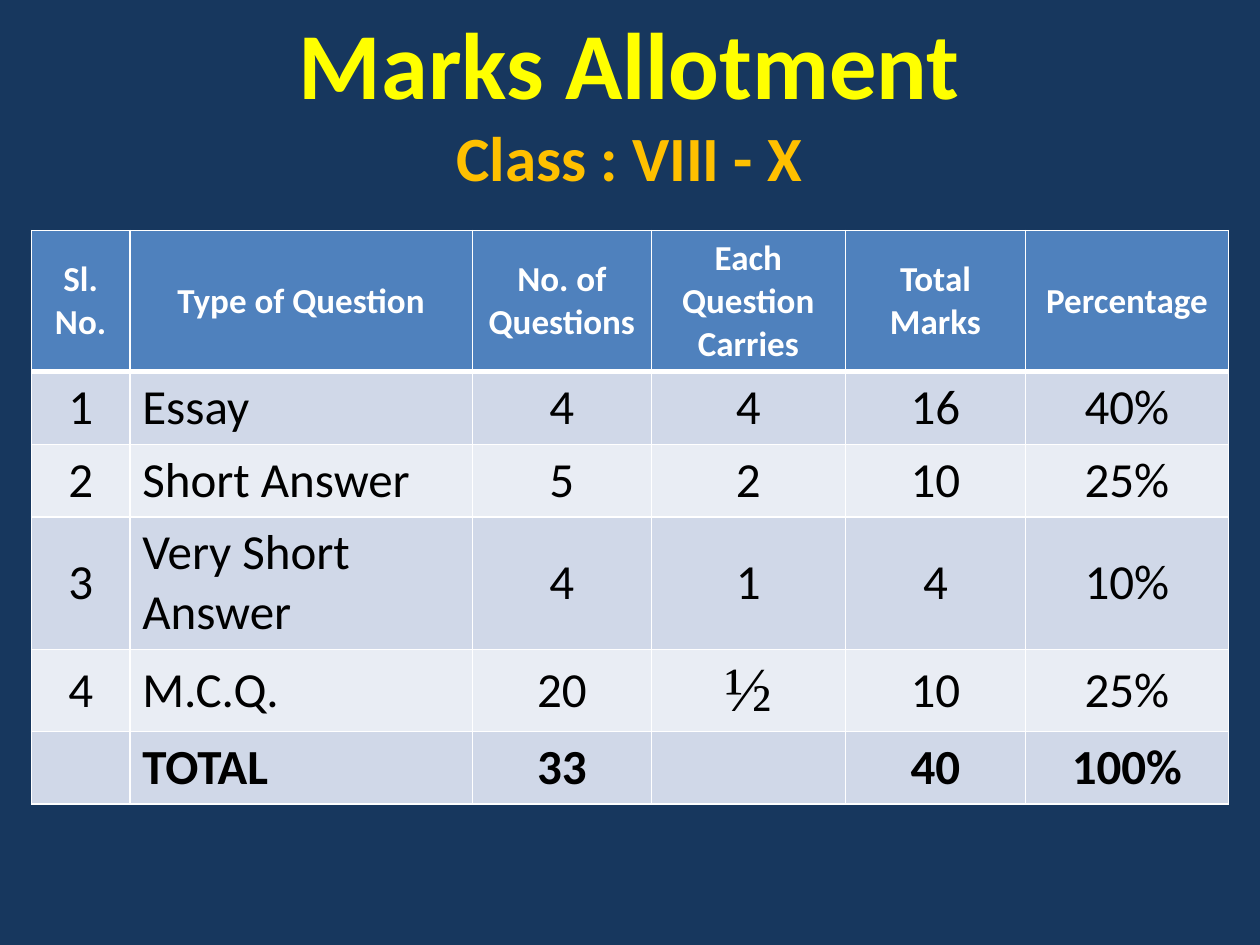
from dataclasses import dataclass
from lxml.etree import SubElement
from pptx import Presentation
from pptx.dml.color import RGBColor
from pptx.enum.text import MSO_ANCHOR, MSO_AUTO_SIZE, PP_ALIGN
from pptx.oxml.ns import qn
from pptx.util import Inches, Pt


@dataclass(frozen=True)
class Theme:
    back: str = "17375E"
    title: str = "FFFF00"
    sub: str = "FFC000"
    head: str = "4F81BD"
    odd: str = "D0D8E8"
    even: str = "E9EDF4"
    white: str = "FFFFFF"
    black: str = "000000"
    font: str = "Calibri"
    serif: str = "Times New Roman"
    big: int = 54
    mid: int = 36
    body: int = 28
    small: int = 20
    thin: int = 1
    thick: int = 3


THEME = Theme()
HALF = "½"
WIDTHS = (0.78, 2.72, 1.42, 1.54, 1.43, 1.61)
HEIGHTS = (1.12, 0.57, 0.57, 1.05, 0.65, 0.57)
MARKS = (
    ("Sl. No.", "Type of Question", "No. of Questions",
     "Each Question Carries", "Total Marks", "Percentage"),
    ("1", "Essay", "4", "4", "16", "40%"),
    ("2", "Short Answer", "5", "2", "10", "25%"),
    ("3", "Very Short Answer", "4", "1", "4", "10%"),
    ("4", "M.C.Q.", "20", HALF, "10", "25%"),
    ("", "TOTAL", "33", "", "40", "100%"),
)


def style(run, size, color, bold, face=THEME.font):
    font = run.font
    font.name = face
    font.size = Pt(size)
    font.bold = bold
    font.color.rgb = RGBColor.from_string(color)


def add_title(slide):
    title = slide.shapes.title
    title.left, title.top = Inches(0.12), Inches(0.08)
    title.width, title.height = Inches(9.75), Inches(1.42)
    frame = title.text_frame
    frame.text = "Marks Allotment\vClass : VIII - X"
    frame.word_wrap = True
    frame.auto_size = MSO_AUTO_SIZE.NONE
    frame.vertical_anchor = MSO_ANCHOR.MIDDLE
    line = frame.paragraphs[0]
    line.alignment = PP_ALIGN.CENTER
    main_run, sub_run = line.runs
    style(main_run, THEME.big, THEME.title, True)
    style(sub_run, THEME.mid, THEME.sub, True)


def add_edges(cell, row):
    props = cell._tc.get_or_add_tcPr()
    tops = {0: THEME.thin, 1: THEME.thick}
    top = tops.get(row, THEME.thin)
    base = tops.get(row + 1, THEME.thin)
    edges = {"lnL": THEME.thin, "lnR": THEME.thin, "lnT": top, "lnB": base}
    for tag, width in edges.items():
        edge = SubElement(props, qn(f"a:{tag}"), w=str(Pt(width)))
        fill = SubElement(edge, qn("a:solidFill"))
        SubElement(fill, qn("a:srgbClr"), val=THEME.white)


def fill_cell(cell, text, row, col):
    head = row == 0
    add_edges(cell, row)
    cell.fill.solid()
    shade = THEME.head if head else THEME.odd if row % 2 else THEME.even
    cell.fill.fore_color.rgb = RGBColor.from_string(shade)
    cell.vertical_anchor = MSO_ANCHOR.MIDDLE
    cell.text_frame.text = text
    line = cell.text_frame.paragraphs[0]
    left = col == 1 and not head
    line.alignment = PP_ALIGN.LEFT if left else PP_ALIGN.CENTER
    for run in line.runs:
        if head:
            style(run, THEME.small, THEME.white, True)
        elif text == HALF:
            style(run, THEME.mid, THEME.black, False, THEME.serif)
        else:
            style(run, THEME.body, THEME.black, row == len(MARKS) - 1)


def add_marks(slide):
    table = slide.shapes.add_table(
        len(MARKS), len(WIDTHS), Inches(0.25), Inches(1.83),
        Inches(sum(WIDTHS)), Inches(sum(HEIGHTS))).table
    for column, width in zip(table.columns, WIDTHS):
        column.width = Inches(width)
    for line, height in zip(table.rows, HEIGHTS):
        line.height = Inches(height)
    for row, texts in enumerate(MARKS):
        for col, text in enumerate(texts):
            fill_cell(table.cell(row, col), text, row, col)


def main():
    deck = Presentation()
    deck.slide_width, deck.slide_height = Inches(10), Inches(7.5)
    slide = deck.slides.add_slide(deck.slide_layouts[5])
    back = slide.background.fill
    back.solid()
    back.fore_color.rgb = RGBColor.from_string(THEME.back)
    add_title(slide)
    add_marks(slide)
    deck.save("out.pptx")


if __name__ == "__main__":
    main()
